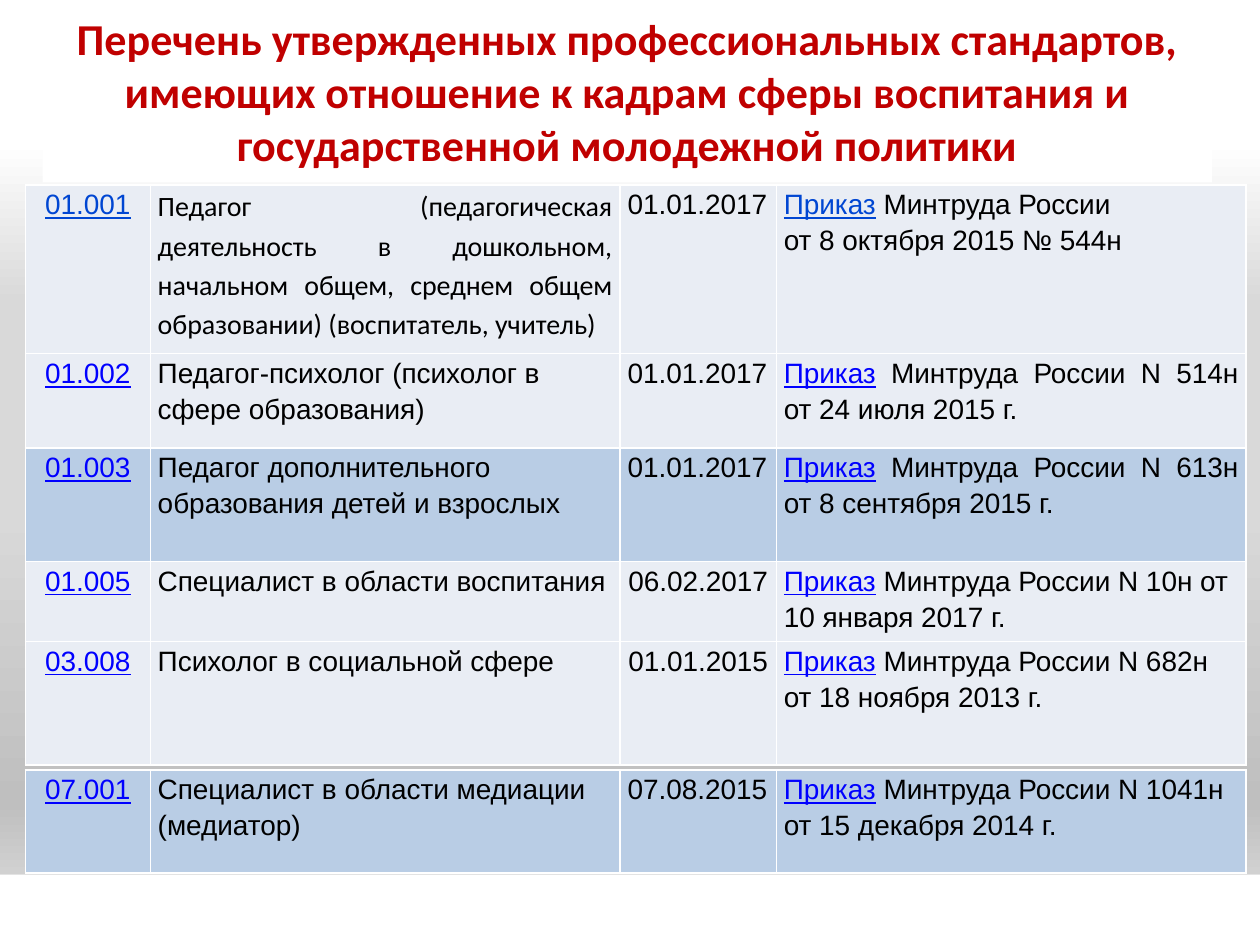
from dataclasses import dataclass

from lxml.etree import SubElement
from pptx import Presentation
from pptx.dml.color import RGBColor
from pptx.enum.shapes import MSO_SHAPE
from pptx.enum.text import MSO_ANCHOR, PP_ALIGN
from pptx.oxml.ns import qn
from pptx.util import Cm, Pt


@dataclass(frozen=True)
class Theme:
    white: str = "FFFFFF"
    title: str = "C00000"
    title_outline: str = "990000"
    text: str = "000000"
    link: str = "0000FF"
    first_link: str = "0046D2"
    pale: str = "E9EDF4"
    accent: str = "B9CDE5"
    backdrop: tuple = ((0, "FFFFFF"), (15, "FFFFFF"), (32, "D9D9D9"),
                       (54, "D9D9D9"), (85, "BFBFBF"), (100, "E6E6E6"))
    title_font: str = "Calibri"
    body_font: str = "Arial"
    title_size: float = 25.2
    body_size: float = 16


THEME = Theme()
LEFT, CENTER, JUSTIFY = PP_ALIGN.LEFT, PP_ALIGN.CENTER, PP_ALIGN.JUSTIFY
COLUMN_WIDTHS = (2.52, 9.47, 3.15, 9.47)
TABLE_LEFT = 0.51
CELL_MARGIN = 0.15


@dataclass(frozen=True)
class Standard:
    code: str
    profession: str
    start_date: str
    order: str
    height: float
    fill: str = THEME.pale
    link: str = THEME.link
    profession_font: str = THEME.body_font
    profession_align: PP_ALIGN = LEFT
    date_align: PP_ALIGN = JUSTIFY
    order_align: PP_ALIGN = LEFT


@dataclass(frozen=True)
class Section:
    top: float
    standards: tuple


SECTIONS = (
    Section(3.73, (
        Standard("01.001", "Педагог (педагогическая деятельность в дошкольном, начальном общем, "
                 "среднем общем образовании) (воспитатель, учитель)", "01.01.2017",
                 " Минтруда России \nот 8 октября 2015 № 544н", 3.4, link=THEME.first_link,
                 profession_font=THEME.title_font, profession_align=JUSTIFY),
        Standard("01.002", "Педагог-психолог (психолог в сфере образования)", "01.01.2017",
                 " Минтруда России N 514н от 24 июля 2015 г.", 1.9, order_align=JUSTIFY),
        Standard("01.003", "Педагог дополнительного образования детей и взрослых", "01.01.2017",
                 " Минтруда России N 613н от 8 сентября 2015 г.", 2.29,
                 fill=THEME.accent, order_align=JUSTIFY),
        Standard("01.005", "Специалист в области воспитания", "06.02.2017",
                 " Минтруда России N 10н от 10 января 2017 г.", 1.75,
                 profession_align=JUSTIFY, date_align=CENTER),
    )),
    Section(12.93, (
        Standard("03.008", "Психолог в социальной сфере", "01.01.2015",
                 " Минтруда России N 682н от 18 ноября 2013 г.", 2.49, date_align=CENTER),
    )),
    Section(15.52, (
        Standard("07.001", "Специалист в области медиации (медиатор)", "07.08.2015",
                 " Минтруда России N 1041н от 15 декабря 2014 г.", 2.08,
                 fill=THEME.accent, date_align=LEFT),
    )),
)


def rgb(color: str) -> RGBColor:
    return RGBColor.from_string(color)


def add_solid(parent, color: str) -> None:
    fill = SubElement(parent, qn("a:solidFill"))
    SubElement(fill, qn("a:srgbClr"), val=color)


def paint_background(slide) -> None:
    fill = slide.background.fill
    fill.gradient()
    fill.gradient_angle = 270
    stops = next(slide.element.iter(qn("a:gsLst")))
    for stop in list(stops):
        stops.remove(stop)
    for percent, color in THEME.backdrop:
        stop = SubElement(stops, qn("a:gs"), pos=str(percent * 1000))
        SubElement(stop, qn("a:srgbClr"), val=color)


def add_panel(slide, left: float, top: float, width: float, height: float):
    panel = slide.shapes.add_shape(MSO_SHAPE.RECTANGLE, Cm(left), Cm(top), Cm(width), Cm(height))
    panel.shadow.inherit = False
    panel.fill.solid()
    panel.fill.fore_color.rgb = rgb(THEME.white)
    panel.line.fill.background()
    return panel


def add_title(slide, wording: str) -> None:
    title = add_panel(slide, 0.86, 0, 23.57, 3.68)
    frame = title.text_frame
    frame.text = wording
    frame.word_wrap = True
    frame.vertical_anchor = MSO_ANCHOR.MIDDLE
    paragraph = frame.paragraphs[0]
    paragraph.alignment = CENTER
    run = paragraph.runs[0]
    format_run(run, THEME.title, THEME.title_font, THEME.title_size)
    run.font.bold = True
    properties = run.font._element
    outline = SubElement(properties, qn("a:ln"), w=str(Pt(0.75)))
    add_solid(outline, THEME.title_outline)
    properties.insert(0, outline)


def format_run(run, color: str, font: str = THEME.body_font,
               size: float = THEME.body_size, underline: bool = False) -> None:
    run.font.name = font
    run.font.size = Pt(size)
    run.font.color.rgb = rgb(color)
    run.font.underline = underline


def style_cell(cell, fill: str, align: PP_ALIGN) -> None:
    cell.margin_left = cell.margin_right = Cm(CELL_MARGIN)
    cell.margin_top = cell.margin_bottom = 0
    properties = cell._tc.get_or_add_tcPr()
    for side in ("a:lnL", "a:lnR", "a:lnT", "a:lnB"):
        add_solid(SubElement(properties, qn(side), w=str(Pt(1))), THEME.white)
    cell.fill.solid()
    cell.fill.fore_color.rgb = rgb(fill)
    paragraph = cell.text_frame.paragraphs[0]
    paragraph.alignment = align
    paragraph.line_spacing = 1.15


def fill_row(cells, standard: Standard) -> None:
    code, profession, start_date, order = cells
    aligns = (CENTER, standard.profession_align, standard.date_align, standard.order_align)
    for cell, align in zip(cells, aligns):
        style_cell(cell, standard.fill, align)

    code.text_frame.paragraphs[0].text = standard.code
    profession.text_frame.paragraphs[0].text = standard.profession
    start_date.text_frame.paragraphs[0].text = standard.start_date
    format_run(code.text_frame.paragraphs[0].runs[0], standard.link, underline=True)
    format_run(profession.text_frame.paragraphs[0].runs[0], THEME.text, standard.profession_font)
    format_run(start_date.text_frame.paragraphs[0].runs[0], THEME.text)

    # The linked word keeps its own run before the rest of the order
    paragraph = order.text_frame.paragraphs[0]
    paragraph.text = "Приказ"
    format_run(paragraph.runs[0], standard.link, underline=True)
    for number, line in enumerate(standard.order.split("\n")):
        if number:
            paragraph.add_line_break()
        details = paragraph.add_run()
        details.text = line
        format_run(details, THEME.text)


def add_section(slide, section: Section) -> None:
    height = sum(standard.height for standard in section.standards)
    table = slide.shapes.add_table(len(section.standards), len(COLUMN_WIDTHS), Cm(TABLE_LEFT),
                                   Cm(section.top), Cm(sum(COLUMN_WIDTHS)), Cm(height)).table
    table.first_row = table.horz_banding = False
    for column, width in zip(table.columns, COLUMN_WIDTHS):
        column.width = Cm(width)
    for row, standard in zip(table.rows, section.standards):
        row.height = Cm(standard.height)
        fill_row(tuple(row.cells), standard)


def main() -> None:
    presentation = Presentation()
    presentation.slide_width, presentation.slide_height = Cm(25.4), Cm(19.05)
    slide = presentation.slides.add_slide(presentation.slide_layouts[6])

    # Backdrop and bottom strip
    paint_background(slide)
    add_panel(slide, 0, 17.63, 25.43, 1.47)

    # Heading
    add_title(slide, "Перечень утвержденных профессиональных стандартов, имеющих отношение "
                     "к кадрам сферы воспитания и государственной молодежной политики")

    # Tables of standards
    for section in SECTIONS:
        add_section(slide, section)
    presentation.save("out.pptx")


if __name__ == "__main__":
    main()
